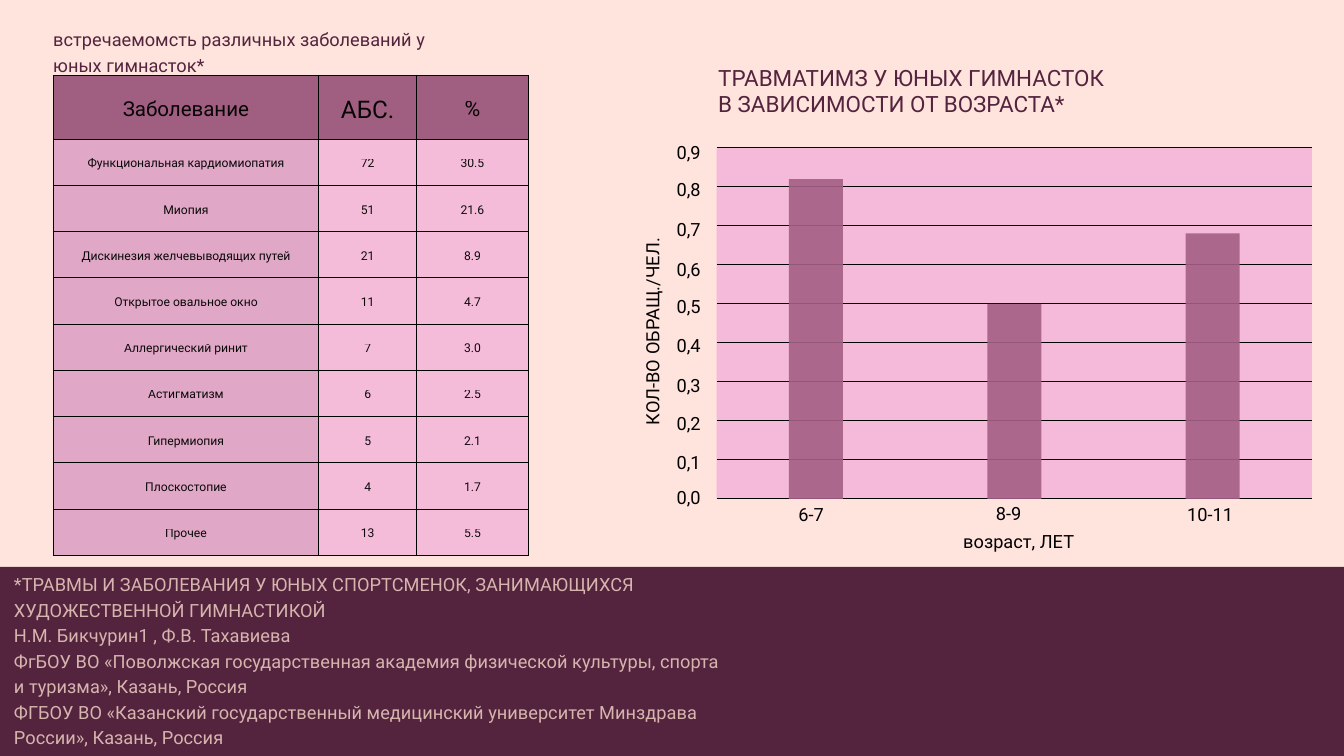
"""Build a slide on illness and injury rates among young gymnasts."""
from typing import NamedTuple

from lxml import etree
from pptx import Presentation
from pptx.chart.data import CategoryChartData
from pptx.dml.color import RGBColor
from pptx.enum.chart import XL_CHART_TYPE
from pptx.enum.shapes import MSO_SHAPE
from pptx.enum.text import MSO_ANCHOR, MSO_AUTO_SIZE, PP_ALIGN
from pptx.oxml import parse_xml
from pptx.oxml.ns import nsdecls, qn
from pptx.slide import Slide
from pptx.util import Pt

COLUMN = XL_CHART_TYPE.COLUMN_CLUSTERED
RECT = MSO_SHAPE.RECTANGLE
MIDDLE = MSO_ANCHOR.MIDDLE
GROW = MSO_AUTO_SIZE.SHAPE_TO_FIT_TEXT
CENTER = PP_ALIGN.CENTER

FONT = "Roboto"
BLACK, PLUM, CREAM, SAND = "000000", "54243E", "FFE3DD", "D6B5AE"
HEAD, ROSE, PINK, BAR = "9B577C", "DFA5C5", "F5BADA", "A46085"


class Label(NamedTuple):
    text: str
    left: float
    top: float
    width: float
    height: float
    color: str = BLACK
    size: float = 19.5
    turn: int = 0


class Row(NamedTuple):
    name: str
    count: str
    share: str


NOTE = Label(
    "*ТРАВМЫ И ЗАБОЛЕВАНИЯ У ЮНЫХ СПОРТСМЕНОК, ЗАНИМАЮЩИХСЯ ХУДОЖЕСТВЕННОЙ ГИМНАСТИКОЙ\n"
    "Н.М. Бикчурин1 , Ф.В. Тахавиева\n"
    "ФгБОУ ВО «Поволжская государственная академия физической культуры, спорта "
    "и туризма», Казань, Россия\n"
    "ФГБОУ ВО «Казанский государственный медицинский университет Минздрава "
    "России», Казань, Россия",
    15, 610.5, 759, 189.5, SAND)
TITLES = [
    Label("встречаемомсть различных заболеваний у юных гимнасток*",
          57, 26.5, 425.5, 54.5, PLUM),
    Label("ТРАВМАТИМЗ У ЮНЫХ ГИМНАСТОК В ЗАВИСИМОСТИ ОТ ВОЗРАСТА*",
          769.5, 70.5, 425.5, 54.5, PLUM, 24),
]
AXES = [
    Label("6-7", 855.5, 535.5, 46, 27),
    Label("8-9", 1067, 534.5, 46, 27),
    Label("10-11", 1272, 535.5, 61, 27),
    Label("возраст, ЛЕТ", 1032, 564.5, 144, 27.5),
    Label("КОЛ-ВО ОБРАЩ./ЧЕЛ.", 590.5, 335.5, 212.5, 27.5, turn=270),
]
TICKS = [517, 480, 438, 397, 354, 313, 273, 230, 187, 147]
ROWS = [
    Row("Заболевание", "АБС.", "%"),
    Row("Функциональная кардиомиопатия", "72", "30.5"),
    Row("Миопия", "51", "21.6"),
    Row("Дискинезия желчевыводящих путей", "21", "8.9"),
    Row("Открытое овальное окно", "11", "4.7"),
    Row("Аллергический ринит", "7", "3.0"),
    Row("Астигматизм", "6", "2.5"),
    Row("Гипермиопия", "5", "2.1"),
    Row("Плоскостопие", "4", "1.7"),
    Row("Прочее", "13", "5.5"),
]
WIDTHS = [284.4, 105.1, 119.5]
SIZES = [22, 26, 23]


def rgb(code: str) -> RGBColor:
    """Turn a hex string into a colour."""
    return RGBColor.from_string(code)


def paint(fill, code: str) -> None:
    """Make a fill solid in one colour."""
    fill.solid()
    fill.fore_color.rgb = rgb(code)


def fade(root, pct: int) -> None:
    """Set the opacity of every colour below an element."""
    for node in root.iter(qn("a:srgbClr")):
        etree.SubElement(node, qn("a:alpha")).set("val", str(pct * 1000))


def style(para, size: float, color: str, lead: float) -> None:
    """Set the font and line spacing of a paragraph."""
    para.line_spacing = Pt(lead)
    para.font.name = FONT
    para.font.size = Pt(size)
    para.font.color.rgb = rgb(color)


def write(slide: Slide, label: Label) -> None:
    """Add one label as a text box."""
    box = slide.shapes.add_textbox(
        Pt(label.left), Pt(label.top), Pt(label.width), Pt(label.height))
    box.rotation = label.turn
    frame = box.text_frame
    frame.margin_left = frame.margin_right = 0
    frame.margin_top = frame.margin_bottom = 0
    frame.word_wrap = True
    frame.auto_size = GROW
    frame.text = label.text
    for para in frame.paragraphs:
        style(para, label.size, label.color, 27.3)


def fill_cell(cell, text: str, size: float, color: str) -> None:
    """Write, fill and frame one table cell."""
    cell.text = text
    cell.vertical_anchor = MIDDLE
    cell.margin_left = cell.margin_right = Pt(15)
    cell.margin_top = cell.margin_bottom = Pt(15)
    para = cell.text_frame.paragraphs[0]
    para.alignment = CENTER
    style(para, size, BLACK, size * 1.4)
    paint(cell.fill, color)
    fade(cell._tc, 95)
    props = cell._tc.get_or_add_tcPr()
    for spot, side in enumerate("LRTB"):
        props.insert(spot, parse_xml(
            f'<a:ln{side} {nsdecls("a")} w="{Pt(0.75)}"><a:solidFill>'
            f'<a:srgbClr val="{BLACK}"/></a:solidFill></a:ln{side}>'))


def add_grid(slide: Slide) -> None:
    """Add the table of illnesses."""
    table = slide.shapes.add_table(
        len(ROWS), len(WIDTHS), Pt(57), Pt(80.5), Pt(509), Pt(514.5)).table
    table.first_row = table.horz_banding = False
    for col, width in zip(table.columns, WIDTHS):
        col.width = Pt(width)
    for i, row in enumerate(ROWS):
        table.rows[i].height = Pt(49.55 if i else 68.5)
        for j, text in enumerate(row):
            color = (PINK if j else ROSE) if i else HEAD
            fill_cell(table.cell(i, j), text, 13 if i else SIZES[j], color)


def add_bars(slide: Slide) -> None:
    """Add the column chart of injuries by age."""
    data = CategoryChartData()
    data.categories = ["1", "2", "3"]
    data.add_series("Series 1", [100, 61, 83])
    chart = slide.shapes.add_chart(
        COLUMN, Pt(738.5), Pt(141), Pt(667.5), Pt(402), data).chart
    chart.has_title = chart.has_legend = False
    chart.font.name = "Calibri"
    chart.font.size = Pt(10)
    chart.font.color.rgb = rgb(BLACK)
    chart.category_axis.visible = False
    axis = chart.value_axis
    axis.visible = False
    axis.minimum_scale, axis.maximum_scale, axis.major_unit = 0, 109.8, 12.2
    line = axis.major_gridlines.format.line
    line.color.rgb = rgb(BLACK)
    line.width = Pt(0.75)
    plot = chart.plots[0]
    plot.vary_by_categories = False
    plot.gap_width, plot.overlap = 267, -43
    bars = plot.series[0]
    paint(bars.format.fill, BAR)
    fade(bars._element, 91)
    area = chart._chartSpace.chart.plotArea
    for old in area.findall(qn("c:layout")):
        area.remove(old)
    area.insert(0, parse_xml(
        f'<c:layout {nsdecls("c")}><c:manualLayout><c:layoutTarget val="inner"/>'
        '<c:xMode val="edge"/><c:yMode val="edge"/><c:x val="0.044"/>'
        '<c:y val="0.043"/><c:w val="0.956"/><c:h val="0.936"/>'
        '</c:manualLayout></c:layout>'))
    area.append(parse_xml(
        f'<c:spPr {nsdecls("c", "a")}><a:solidFill><a:srgbClr val="{PINK}"/>'
        '</a:solidFill></c:spPr>'))


def main() -> None:
    """Build and save the slide."""
    deck = Presentation()
    deck.slide_width, deck.slide_height = Pt(1440), Pt(810)
    slide = deck.slides.add_slide(deck.slide_layouts[6])
    paint(slide.background.fill, CREAM)
    band = slide.shapes.add_shape(RECT, 0, Pt(607.5), Pt(1440), Pt(202.5))
    band.shadow.inherit = False
    paint(band.fill, PLUM)
    band.line.fill.background()
    add_grid(slide)
    add_bars(slide)
    ticks = [Label(f"0,{i}", 725, top, 46, 24.5) for i, top in enumerate(TICKS)]
    for label in [NOTE, *TITLES, *AXES, *ticks]:
        write(slide, label)
    deck.save("out.pptx")


if __name__ == "__main__":
    main()
